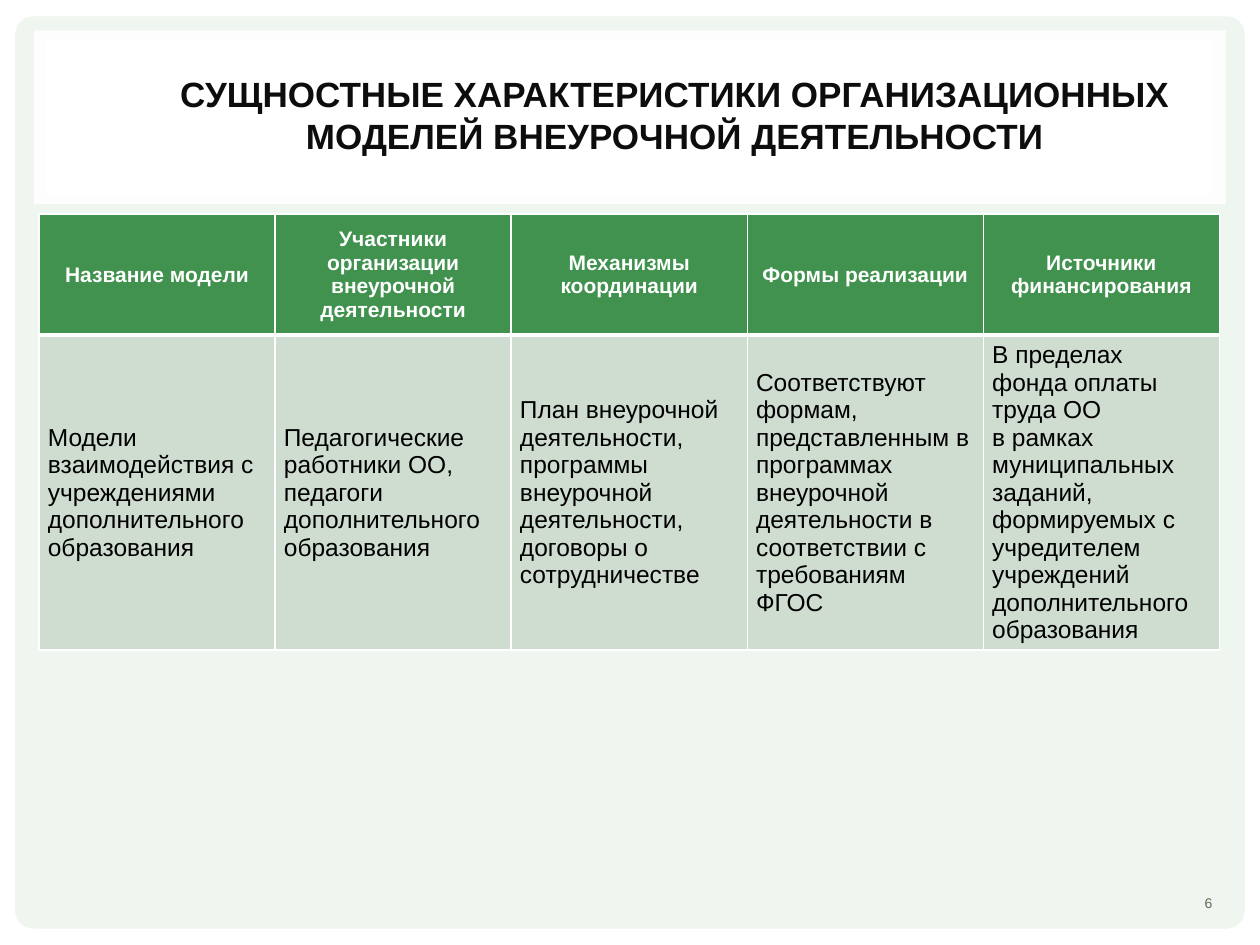
"""Build the slide comparing organisational models of extracurricular work."""
from dataclasses import dataclass

from lxml.etree import SubElement
from pptx import Presentation
from pptx.dml.color import RGBColor
from pptx.enum.shapes import MSO_SHAPE
from pptx.enum.text import MSO_ANCHOR, PP_ALIGN
from pptx.oxml.ns import qn
from pptx.util import Inches, Pt

WHITE = "FFFFFF"
BLACK = "000000"


@dataclass
class Panel:
    left: float
    top: float
    width: float
    height: float
    fill: str
    radius: float = 0
    opacity: int = 100


@dataclass
class RowStyle:
    height: float
    fill: str
    top_border: float
    bottom_border: float
    text_format: dict


PANELS = [
    Panel(0.1, 0.11, 9.8, 7.29, WHITE, radius=0.02),
    Panel(0.12, 0.13, 9.76, 7.24, "EFF5EF", radius=0.02),
    Panel(0.27, 0.24, 9.46, 1.38, WHITE, opacity=83),
    Panel(0.36, 0.31, 9.27, 1.23, WHITE),
]
ROW_STYLES = [
    RowStyle(0.96, "40924E", 1, 3, dict(size=12, color=WHITE, bold=True, align=PP_ALIGN.CENTER)),
    RowStyle(2.5, "CFDCD0", 3, 1, dict(size=14, color=BLACK)),
]
ROWS = [
    [
        "Название модели",
        "Участники организации внеурочной деятельности",
        "Механизмы координации",
        "Формы реализации",
        "Источники финансирования",
    ],
    [
        "Модели взаимодействия с учреждениями дополнительного образования",
        "Педагогические работники ОО, педагоги дополнительного образования",
        "План внеурочной деятельности, программы внеурочной деятельности, договоры о сотрудничестве",
        "Соответствуют формам, представленным в программах внеурочной деятельности "
        "в соответствии с требованиям ФГОС",
        "В пределах\vфонда оплаты труда ОО\n"
        "в рамках муниципальных заданий, формируемых с учредителем учреждений "
        "дополнительного образования",
    ],
]


def rgb(color: str) -> RGBColor:
    return RGBColor.from_string(color)


def write_text(text_frame, text: str, *, size: float, color: str, bold: bool = False,
               align=PP_ALIGN.LEFT) -> None:
    text_frame.text = text
    text_frame.word_wrap = True
    for paragraph in text_frame.paragraphs:
        paragraph.alignment = align
        for run in paragraph.runs:
            run.font.name = "Arial"
            run.font.size = Pt(size)
            run.font.bold = bold
            run.font.color.rgb = rgb(color)


def place(shape, left: float, top: float, width: float, height: float) -> None:
    shape.left, shape.top = Inches(left), Inches(top)
    shape.width, shape.height = Inches(width), Inches(height)


def add_panel(slide, panel: Panel) -> None:
    kind = MSO_SHAPE.ROUNDED_RECTANGLE if panel.radius else MSO_SHAPE.RECTANGLE
    shape = slide.shapes.add_shape(kind, Inches(panel.left), Inches(panel.top),
                                   Inches(panel.width), Inches(panel.height))
    if panel.radius:
        shape.adjustments[0] = panel.radius
    shape.shadow.inherit = False
    shape.line.fill.background()
    shape.fill.solid()
    shape.fill.fore_color.rgb = rgb(panel.fill)
    if panel.opacity < 100:
        color = shape.fill._xPr.find(qn("a:solidFill"))[0]
        SubElement(color, qn("a:alpha"), val=str(panel.opacity * 1000))


def add_borders(cell, top: float, bottom: float) -> None:
    properties = cell._tc.get_or_add_tcPr()
    for side, width in (("L", 1), ("R", 1), ("T", top), ("B", bottom)):
        line = SubElement(properties, qn(f"a:ln{side}"), w=str(Pt(width)))
        SubElement(SubElement(line, qn("a:solidFill")), qn("a:srgbClr"), val=WHITE)


def format_cell(cell, text: str, style: RowStyle) -> None:
    add_borders(cell, style.top_border, style.bottom_border)
    cell.fill.solid()
    cell.fill.fore_color.rgb = rgb(style.fill)
    cell.vertical_anchor = MSO_ANCHOR.MIDDLE
    cell.margin_left = cell.margin_right = Inches(0.07)
    cell.margin_top = cell.margin_bottom = 0
    write_text(cell.text_frame, text, **style.text_format)


def add_models_table(slide) -> None:
    height = sum(style.height for style in ROW_STYLES)
    table = slide.shapes.add_table(len(ROWS), len(ROWS[0]), Inches(0.31), Inches(1.7),
                                   Inches(9.37), Inches(height)).table
    for row, style, texts in zip(table.rows, ROW_STYLES, ROWS):
        row.height = Inches(style.height)
        for cell, text in zip(row.cells, texts):
            format_cell(cell, text, style)


def add_page_number(slide) -> None:
    box = slide.shapes.add_textbox(Inches(8.7), Inches(6.97), Inches(1.02), Inches(0.4))
    box.text_frame.vertical_anchor = MSO_ANCHOR.MIDDLE
    write_text(box.text_frame, "6", size=8, color="676A55", align=PP_ALIGN.RIGHT)


def format_title(slide) -> None:
    title = slide.shapes.title
    place(title, 1.14, 0.36, 8.43, 1.1)
    title.text_frame.vertical_anchor = MSO_ANCHOR.MIDDLE
    write_text(title.text_frame,
               "СУЩНОСТНЫЕ ХАРАКТЕРИСТИКИ ОРГАНИЗАЦИОННЫХ МОДЕЛЕЙ ВНЕУРОЧНОЙ ДЕЯТЕЛЬНОСТИ",
               size=20, color="0D0D0D", bold=True, align=PP_ALIGN.CENTER)
    title.element.getparent().append(title.element)


def main() -> None:
    presentation = Presentation()
    presentation.slide_width, presentation.slide_height = Inches(10), Inches(7.5)
    slide = presentation.slides.add_slide(presentation.slide_layouts[5])
    for panel in PANELS:
        add_panel(slide, panel)
    add_models_table(slide)
    add_page_number(slide)
    format_title(slide)
    presentation.save("out.pptx")


if __name__ == "__main__":
    main()
